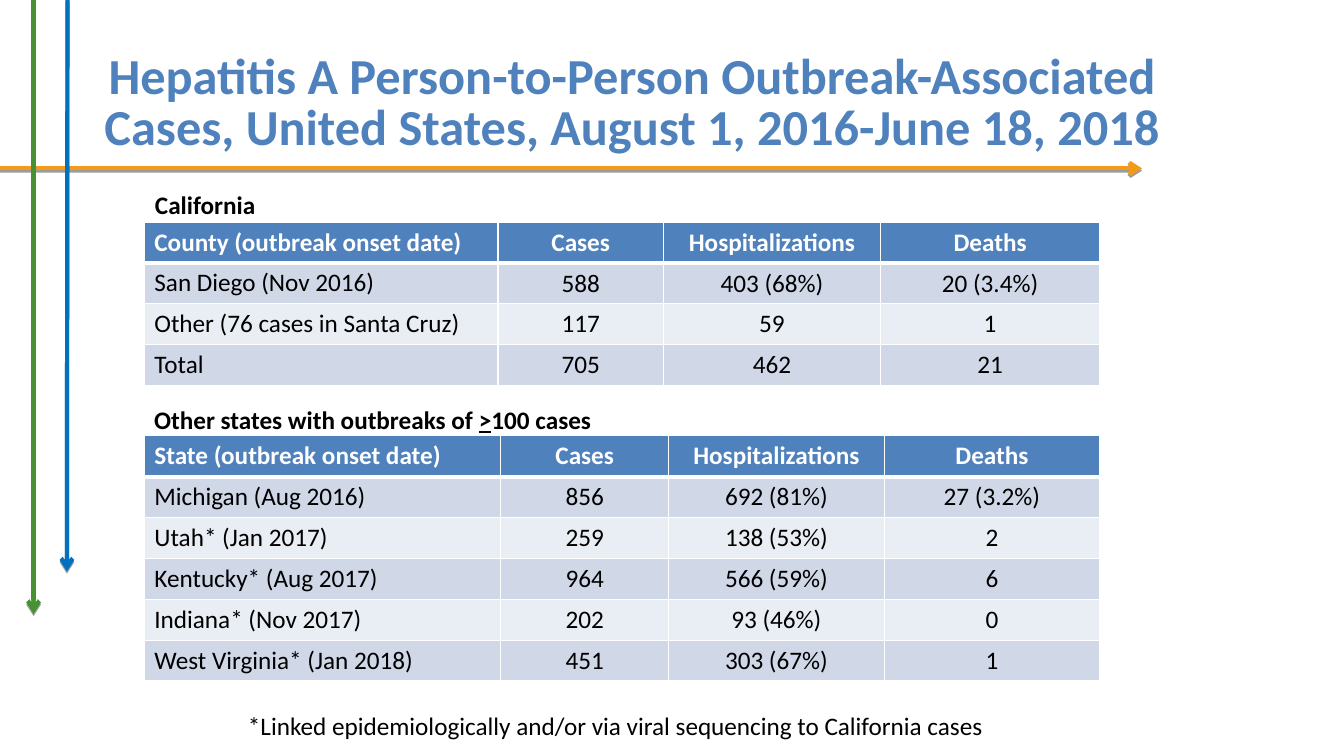
from lxml import etree
from pptx import Presentation
from pptx import util as u
from pptx.dml.color import RGBColor
from pptx.enum import shapes, text
from pptx.oxml import ns

BLUE = RGBColor(0x4F, 0x81, 0xBD)
WHITE = RGBColor(255, 255, 255)
BLACK = RGBColor(0, 0, 0)
BANDS = [RGBColor(0xD0, 0xD8, 0xE8), RGBColor(0xE9, 0xED, 0xF4)]
ORANGE = RGBColor(0xF2, 0x9B, 0x1A)
GREEN = RGBColor(0x47, 0x91, 0x33)
AZURE = RGBColor(0x00, 0x70, 0xC0)

TITLE = "Hepatitis A Person-to-Person Outbreak-Associated Cases, United States, August 1, 2016-June 18, 2018"
ARROWS = [
    (0, 120.3, 815.8, 120.3, ORANGE),
    (24, 0, 24, 438.5, GREEN),
    (48.2, 0, 47.8, 408.2, AZURE),
]
LABELS = [
    ((103.6, 131.8, 86.4, 29.1), False, True, [("California", False)]),
    ((103, 285.1, 335.5, 29.1), True, True,
     [("Other states with outbreaks of ", False), (">", True), ("100 cases", False)]),
    ((170, 504, 541.4, 29.1), False, False,
     [("*Linked epidemiologically and/or via viral sequencing to California cases", False)]),
]
HEADS = ["Cases", "Hospitalizations", "Deaths"]
TABLES = [
    (158.6, [252.7, 118.1, 155.1, 156.6], text.MSO_ANCHOR.MIDDLE, [
        ["County (outbreak onset date)", *HEADS],
        ["San Diego (Nov 2016)", "588", "403 (68%)", "20 (3.4%)"],
        ["Other (76 cases in Santa Cruz)", "117", "59", "1"],
        ["Total", "705", "462", "21"],
    ]),
    (311.3, [254.6, 120, 153.9, 154], text.MSO_ANCHOR.TOP, [
        ["State (outbreak onset date)", *HEADS],
        ["Michigan (Aug 2016)", "856", "692 (81%)", "27 (3.2%)"],
        ["Utah* (Jan 2017)", "259", "138 (53%)", "2"],
        ["Kentucky* (Aug 2017)", "964", "566 (59%)", "6"],
        ["Indiana* (Nov 2017)", "202", "93 (46%)", "0"],
        ["West Virginia* (Jan 2018)", "451", "303 (67%)", "1"],
    ]),
]
LEFT, ROW = 103.1, 29.2


def add(up, tag, **attrs):
    return etree.SubElement(up, ns.qn("a:" + tag), {k: str(v) for k, v in attrs.items()})


def write(para, words, size, color, bold=False, under=False):
    run = para.add_run()
    run.text = words
    font = run.font
    font.name, font.size, font.bold = "Calibri", u.Pt(size), bold
    font.color.rgb = color
    if under:
        font.underline = True


def box(slide, place, wrap):
    frame = slide.shapes.add_textbox(*map(u.Pt, place)).text_frame
    frame.word_wrap = wrap
    return frame


def arrow(slide, x1, y1, x2, y2, color):
    line = slide.shapes.add_connector(
        shapes.MSO_CONNECTOR.STRAIGHT, u.Pt(x1), u.Pt(y1), u.Pt(x2), u.Pt(y2))
    line.line.color.rgb = color
    line.line.width = u.Pt(3)
    props = line._element.spPr
    add(props.find(ns.qn("a:ln")), "tailEnd", type="arrow")
    shade = add(add(props, "effectLst"), "outerShdw",
                blurRad=0, dist=u.Pt(1.6), dir=5400000, rotWithShape=0)
    add(add(shade, "srgbClr", val=BLACK), "alpha", val=38000)


def edge(cell, row):
    props = cell._tc.get_or_add_tcPr()
    wide = {"T": 3 if row == 1 else 1, "B": 3 if row == 0 else 1}
    for side in "LRTB":
        line = add(props, "ln" + side, w=u.Pt(wide.get(side, 1)))
        add(add(line, "solidFill"), "srgbClr", val=WHITE)


def grid(slide, top, cols, anchor, rows):
    table = slide.shapes.add_table(
        len(rows), len(cols), u.Pt(LEFT), u.Pt(top),
        u.Pt(sum(cols)), u.Pt(ROW * len(rows))).table
    for col, width in zip(table.columns, cols):
        col.width = u.Pt(width)
    for r, row in enumerate(rows):
        table.rows[r].height = u.Pt(ROW)
        for c, words in enumerate(row):
            cell = table.cell(r, c)
            edge(cell, r)
            cell.fill.solid()
            cell.fill.fore_color.rgb = BANDS[(r - 1) % 2] if r else BLUE
            para = cell.text_frame.paragraphs[0]
            if c:
                para.alignment = text.PP_ALIGN.CENTER
                if r:
                    cell.vertical_anchor = anchor
            write(para, words, 18, BLACK if r else WHITE, r == 0)


def main():
    deck = Presentation()
    deck.slide_width, deck.slide_height = u.Pt(960), u.Pt(540)
    slide = deck.slides.add_slide(deck.slide_layouts[6])
    for item in ARROWS:
        arrow(slide, *item)
    frame = box(slide, (64.8, 29.5, 774, 90), True)
    frame.vertical_anchor = text.MSO_ANCHOR.MIDDLE
    para = frame.paragraphs[0]
    para.alignment = text.PP_ALIGN.CENTER
    para.line_spacing = 0.85
    write(para, TITLE, 36, BLUE, True)
    for item in TABLES:
        grid(slide, *item)
    for place, wrap, bold, runs in LABELS:
        frame = box(slide, place, wrap)
        frame.auto_size = text.MSO_AUTO_SIZE.SHAPE_TO_FIT_TEXT
        for words, under in runs:
            write(frame.paragraphs[0], words, 18, BLACK, bold, under)
    deck.save("out.pptx")


if __name__ == "__main__":
    main()
